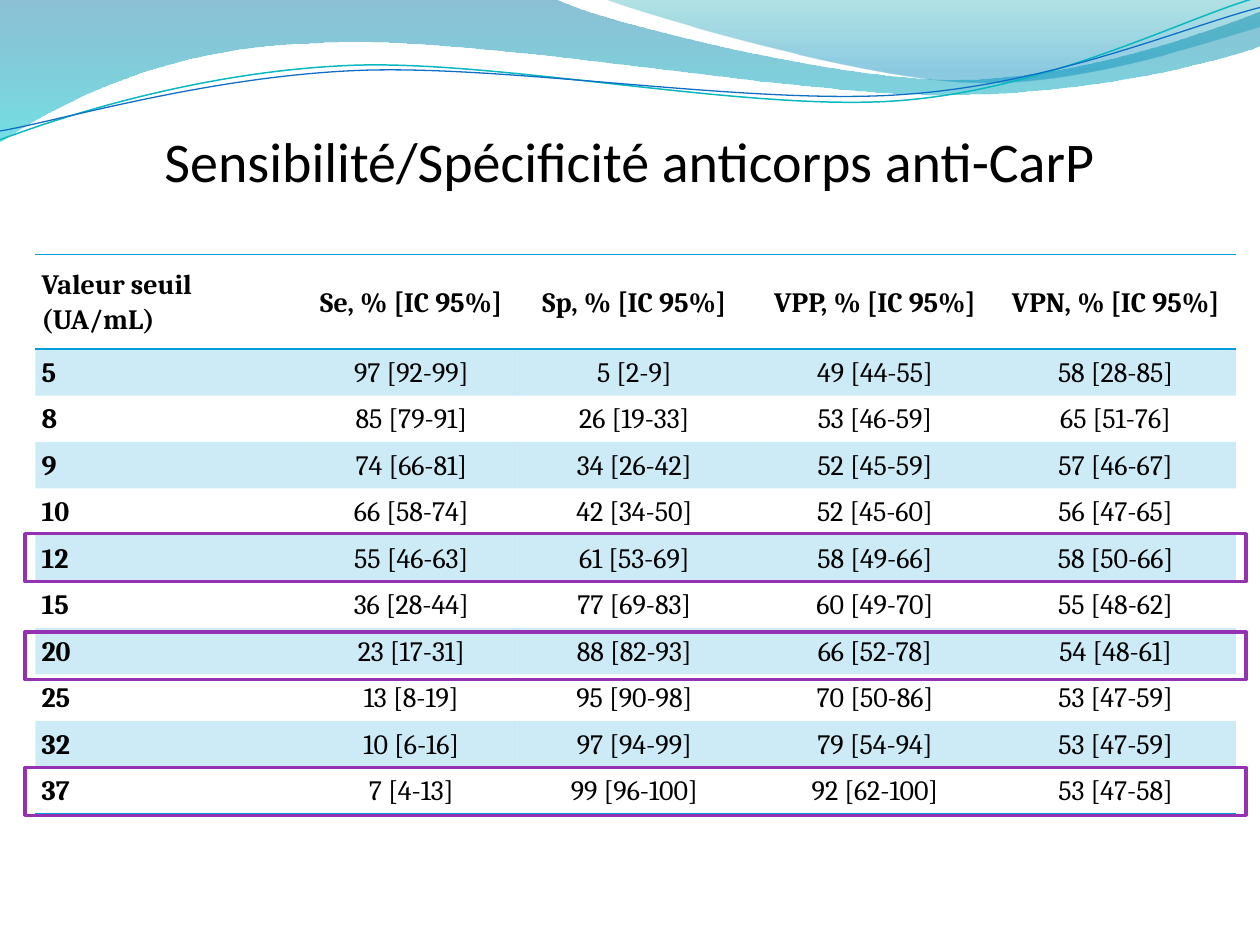
from dataclasses import dataclass
from itertools import accumulate
from math import cos, radians, sin

from lxml.etree import SubElement
from pptx import Presentation
from pptx.dml.color import RGBColor
from pptx.enum.shapes import MSO_SHAPE
from pptx.enum.text import MSO_ANCHOR, PP_ALIGN
from pptx.oxml.ns import qn
from pptx.util import Inches, Pt


@dataclass(frozen=True)
class Theme:
    ink: RGBColor = RGBColor.from_string("000000")
    band: RGBColor = RGBColor.from_string("009DD9")
    mark: RGBColor = RGBColor.from_string("9532B4")
    head: str = "Calibri"
    body: str = "Cambria"
    big: Pt = Pt(32)
    text: Pt = Pt(16)


def bend(shape, steps):
    """Merge each run of three straight segments that stands for a cubic."""
    lines = iter(list(shape._element.iter(qn("a:lnTo"))))
    for step in steps:
        first = next(lines)
        if len(step) == 6:
            first.tag = qn("a:cubicBezTo")
            for line in (next(lines), next(lines)):
                first.append(line[0])
                line.getparent().remove(line)


def fade(color, share):
    """Set the opacity, in percent, of a coloured fill element."""
    SubElement(color, qn("a:alpha")).set("val", str(share * 1000))


look = Theme()
deck = Presentation()
deck.slide_width, deck.slide_height = Inches(10), Inches(7.5)
slide = deck.slides.add_slide(deck.slide_layouts[5])
shapes = slide.shapes

# Waves along the top: outline of lines (x, y) and cubics (x1, y1, x2, y2, x, y),
# gradient stops (place, colour, opacity), line
waves = [
    ([(-0.01, 0), (4.4, -0.01), (4.76, 0.17, 6.64, 0.63, 7.58, 0.63),
      (8.53, 0.63, 9.58, 0.26, 10, 0.09), (10.01, 0.36),
      (9.83, 0.44, 8.7, 0.76, 7.46, 0.75), (6.22, 0.75, 3.82, 0.28, 2.57, 0.34),
      (1.29, 0.36, 0.46, 0.83, -0.01, 1.13)],
     [(0, "0074A1", 45), (1, "00C6CF", 55)], None),
    ([(4.79, -0.01), (5.09, 0.11, 6.82, 0.62, 7.69, 0.65),
      (8.56, 0.69, 9.61, 0.32, 10, 0.21), (10, 0)],
     [(0, "00A1A9", 30), (0.8, "008BBF", 45)], None),
    ([(0, 1.11), (0.48, 0.93, 1.58, 0.57, 2.77, 0.52),
      (3.95, 0.47, 5.93, 0.89, 7.13, 0.8), (8.33, 0.71, 9.38, 0.15, 9.98, -0.02)],
     None, ("0AB8BF", 0.85)),
    ([(0, 1.04), (0.47, 0.96, 1.64, 0.61, 2.83, 0.56),
      (4.03, 0.51, 5.97, 0.84, 7.17, 0.75), (8.36, 0.67, 9.41, 0.21, 10, 0.06)],
     None, ("0F6FC6", 0.75)),
]
for path, stops, line in waves:
    dots = [step[i:i + 2] for step in path for i in range(0, len(step), 2)]
    tilt = 0 if stops else 2.7
    turn, mid = radians(tilt), (5, 0.58)
    flat = []
    for x, y in dots:
        dx, dy = x - mid[0], y - mid[1]
        flat.append((Inches(mid[0] + dx * cos(turn) - dy * sin(turn)),
                     Inches(mid[1] + dx * sin(turn) + dy * cos(turn))))
    pen = shapes.build_freeform(*flat[0])
    pen.add_line_segments(flat[1:], close=bool(stops))
    wave = pen.convert_to_shape()
    bend(wave, path[1:])
    wave.rotation = -tilt
    wave.shadow.inherit = False
    if stops:
        wave.line.fill.background()
        wave.fill.gradient()
        wave.fill.gradient_angle = 270
        for stop, (place, tint, share) in zip(wave.fill.gradient_stops, stops):
            stop.position = place
            stop.color.rgb = RGBColor.from_string(tint)
        for node, item in zip(wave._element.spPr.iter(qn("a:srgbClr")), stops):
            fade(node, item[2])
    else:
        wave.fill.background()
        wave.line.color.rgb = RGBColor.from_string(line[0])
        wave.line.width = Pt(line[1])

# Title, in front of the waves
title = shapes.title
shapes._spTree.append(title._element)
title.left, title.top = Inches(0.39), Inches(0.29)
title.width, title.height = Inches(9.22), Inches(1.25)
frame = title.text_frame
frame.vertical_anchor = MSO_ANCHOR.BOTTOM
frame.margin_left = frame.margin_right = frame.margin_bottom = 0
frame.margin_top = Inches(0.05)
para = frame.paragraphs[0]
para.alignment = PP_ALIGN.CENTER
run = para.add_run()
run.text = "Sensibilité/Spécificité anticorps anti-CarP"
run.font.name, run.font.size = look.head, look.big
run.font.color.rgb = look.ink

# Table of cut-off values
data = [
    ["Valeur seuil (UA/mL)", "Se, % [IC 95%]", "Sp, % [IC 95%]",
     "VPP, % [IC 95%]", "VPN, % [IC 95%]"],
    ["5", "97 [92-99]", "5 [2-9]", "49 [44-55]", "58 [28-85]"],
    ["8", "85 [79-91]", "26 [19-33]", "53 [46-59]", "65 [51-76]"],
    ["9", "74 [66-81]", "34 [26-42]", "52 [45-59]", "57 [46-67]"],
    ["10", "66 [58-74]", "42 [34-50]", "52 [45-60]", "56 [47-65]"],
    ["12", "55 [46-63]", "61 [53-69]", "58 [49-66]", "58 [50-66]"],
    ["15", "36 [28-44]", "77 [69-83]", "60 [49-70]", "55 [48-62]"],
    ["20", "23 [17-31]", "88 [82-93]", "66 [52-78]", "54 [48-61]"],
    ["25", "13 [8-19]", "95 [90-98]", "70 [50-86]", "53 [47-59]"],
    ["32", "10 [6-16]", "97 [94-99]", "79 [54-94]", "53 [47-59]"],
    ["37", "7 [4-13]", "99 [96-100]", "92 [62-100]", "53 [47-58]"],
]
left, top, wide, high = 0.28, 2.02, 9.53, 4.44
cols = [2.17, 1.63] + [1.91] * 3
last = len(data) - 1
rows = [0.75] + [(high - 0.75) / last] * last
tops = list(accumulate(rows, initial=top))
table = shapes.add_table(len(rows), len(cols), Inches(left), Inches(top),
                         Inches(wide), Inches(high)).table
table.first_row = table.horz_banding = False
plain = "{2D5ABB26-0587-4C30-8999-92F81FD0307C}"
table._tbl.tblPr.find(qn("a:tableStyleId")).text = plain
for col, size in zip(table.columns, cols):
    col.width = Inches(size)
for row, size in zip(table.rows, rows):
    row.height = Inches(size)

for r, row in enumerate(data):
    sides = {0: ["a:lnT", "a:lnB"], last: ["a:lnB"]}.get(r, [])
    for c, text in enumerate(row):
        cell = table.cell(r, c)
        cell.vertical_anchor = MSO_ANCHOR.MIDDLE
        cell.margin_left = cell.margin_right = Inches(0.05)
        cell.margin_top = cell.margin_bottom = 0
        props = cell._tc.get_or_add_tcPr()
        for side in sides:
            edge = SubElement(props, qn(side), w=str(Pt(1)))
            fill = SubElement(edge, qn("a:solidFill"))
            SubElement(fill, qn("a:srgbClr"), val=str(look.band))
        if r % 2:
            cell.fill.solid()
            cell.fill.fore_color.rgb = look.band
            fade(props.find(qn("a:solidFill"))[0], 20)
        else:
            cell.fill.background()
        para = cell.text_frame.paragraphs[0]
        para.alignment = PP_ALIGN.CENTER if c else PP_ALIGN.LEFT
        para.line_spacing = 1.07
        run = para.add_run()
        run.text = text
        run.font.name, run.font.size = look.body, look.text
        run.font.bold = r == 0 or c == 0
        run.font.color.rgb = look.ink

# Frames around the key rows, each with a small shift
for r, shift in ((5, -0.01), (10, 0), (7, 0.03)):
    box = shapes.add_shape(MSO_SHAPE.RECTANGLE, Inches(left - 0.08),
                           Inches(tops[r] + shift), Inches(wide + 0.16), Inches(0.38))
    box.shadow.inherit = False
    box.fill.background()
    box.line.color.rgb = look.mark
    box.line.width = Pt(2)

deck.save("out.pptx")
